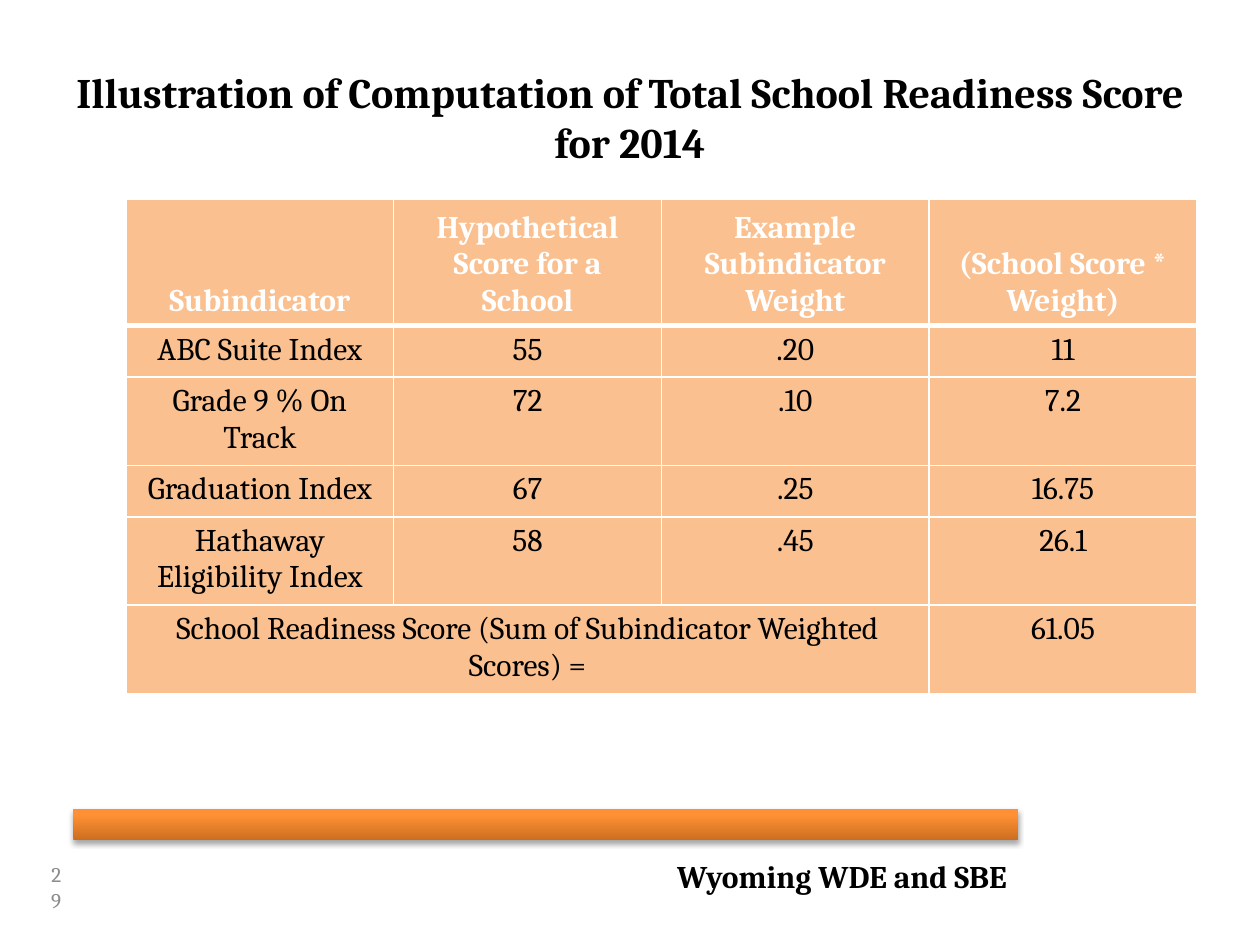
import copy

import pptx
import pptx.dml.color
import pptx.enum.shapes
import pptx.enum.text
import pptx.oxml
import pptx.oxml.ns
import pptx.util
from pptx.util import Cm

RGBColor = pptx.dml.color.RGBColor
ALIGN = pptx.enum.text.PP_ALIGN
ANCHOR = pptx.enum.text.MSO_ANCHOR
SHAPE = pptx.enum.shapes.MSO_SHAPE

BLACK = RGBColor(0x00, 0x00, 0x00)
WHITE = RGBColor(0xFF, 0xFF, 0xFF)
GRAY = RGBColor(0x8C, 0x8C, 0x8C)
PEACH = RGBColor(0xFA, 0xC0, 0x90)
BAR_STOPS = [
    (0, RGBColor(0xCC, 0x6E, 0x20)),
    (0.8, RGBColor(0xFF, 0x90, 0x34)),
    (1, RGBColor(0xFF, 0x91, 0x36)),
]

HEADER = ["Subindicator", "Hypothetical Score for a School",
          "Example Subindicator Weight", "(School Score * Weight)"]
SCORES = [
    ["ABC Suite Index", "55", ".20", "11"],
    ["Grade 9 % On Track", "72", ".10", "7.2"],
    ["Graduation Index", "67", ".25", "16.75"],
    ["Hathaway Eligibility Index", "58", ".45", "26.1"],
]
TOTAL = ["School Readiness Score (Sum of Subindicator Weighted Scores) =", "", "", "61.05"]
ROW_HEIGHTS = [2.44, 1.04, 1.72, 1.04, 1.72, 1.72]


class SlideBuilder:
    font = "Cambria"

    def __init__(self, slide):
        self.slide = slide

    def set_text(self, text_frame, text, size, color, bold=False, align=ALIGN.CENTER):
        text_frame.text = text
        text_frame.word_wrap = True
        for paragraph in text_frame.paragraphs:
            paragraph.alignment = align
            for run in paragraph.runs:
                run.font.name = self.font
                run.font.size = pptx.util.Pt(size)
                run.font.bold = bold
                run.font.color.rgb = color

    def text(self, left, top, width, height, text, anchor=ANCHOR.TOP, **style):
        box = self.slide.shapes.add_textbox(Cm(left), Cm(top), Cm(width), Cm(height))
        box.text_frame.vertical_anchor = anchor
        self.set_text(box.text_frame, text, **style)

    def gradient_bar(self, left, top, width, height, stops):
        bar = self.slide.shapes.add_shape(
            SHAPE.RECTANGLE, Cm(left), Cm(top), Cm(width), Cm(height))
        bar.line.fill.background()
        bar.fill.gradient()
        bar.fill.gradient_angle = 90
        stop_list = bar._element.spPr.find(".//" + pptx.oxml.ns.qn("a:gsLst"))
        stop_list.append(copy.deepcopy(stop_list[-1]))
        for stop, (position, color) in zip(bar.fill.gradient_stops, stops):
            stop.position = position
            stop.color.rgb = color
        # Soft shadow below the bar
        bar.shadow.inherit = False
        effects = bar._element.spPr.find(pptx.oxml.ns.qn("a:effectLst"))
        effects.append(pptx.oxml.parse_xml(
            f'<a:outerShdw {pptx.oxml.ns.nsdecls("a")} blurRad="40000" dist="23000" '
            'dir="5400000" rotWithShape="0"><a:srgbClr val="000000">'
            '<a:alpha val="35000"/></a:srgbClr></a:outerShdw>'))

    def page_number(self, left, top, diameter, number):
        circle = self.slide.shapes.add_shape(
            SHAPE.OVAL, Cm(left), Cm(top), Cm(diameter), Cm(diameter))
        circle.shadow.inherit = False
        circle.fill.background()
        circle.line.fill.background()
        circle.text_frame.vertical_anchor = ANCHOR.MIDDLE
        self.set_text(circle.text_frame, number, 12, GRAY, align=ALIGN.RIGHT)

    def border(self, cell, side, points):
        cell._tc.get_or_add_tcPr().append(pptx.oxml.parse_xml(
            f'<a:ln{side} {pptx.oxml.ns.nsdecls("a")} w="{pptx.util.Pt(points)}">'
            f'<a:solidFill><a:srgbClr val="{WHITE}"/></a:solidFill></a:ln{side}>'))

    def table(self, left, top, width, row_heights, rows):
        shape = self.slide.shapes.add_table(
            len(rows), len(rows[0]), Cm(left), Cm(top), Cm(width), Cm(sum(row_heights)))
        table = shape.table
        for row, height in zip(table.rows, row_heights):
            row.height = Cm(height)
        for row_index, row in enumerate(rows):
            is_header = row_index == 0
            for column_index, text in enumerate(row):
                cell = table.cell(row_index, column_index)
                self.set_text(cell.text_frame, text, 18, WHITE if is_header else BLACK, is_header)
                cell.vertical_anchor = ANCHOR.BOTTOM if is_header else ANCHOR.TOP
                for side in "LRTB":
                    thick = (row_index, side) in [(0, "B"), (1, "T")]
                    self.border(cell, side, 3 if thick else 1)
                cell.fill.solid()
                cell.fill.fore_color.rgb = PEACH
        # The label of the total spans all but the last column
        last_row = len(rows) - 1
        table.cell(last_row, 0).merge(table.cell(last_row, len(rows[0]) - 2))


def main():
    presentation = pptx.Presentation()
    presentation.slide_width = Cm(25.4)
    presentation.slide_height = Cm(19.05)
    builder = SlideBuilder(presentation.slides.add_slide(presentation.slide_layouts[6]))

    # Footer
    builder.gradient_bar(1.48, 16.3, 19.05, 0.64, BAR_STOPS)
    builder.text(1.7, 17.15, 18.85, 1.02, "Wyoming WDE and SBE",
                 size=18, color=BLACK, bold=True, align=ALIGN.RIGHT)

    # Title
    builder.text(1.27, 0.76, 22.86, 3.18,
                 "Illustration of Computation of Total School Readiness Score for 2014",
                 anchor=ANCHOR.MIDDLE, size=24, color=BLACK, bold=True)

    # Score table
    builder.table(2.54, 4.02, 21.59, ROW_HEIGHTS, [HEADER, *SCORES, TOTAL])

    # Page number
    builder.page_number(0.4, 17.25, 1.27, "29")

    presentation.save("out.pptx")


if __name__ == "__main__":
    main()
